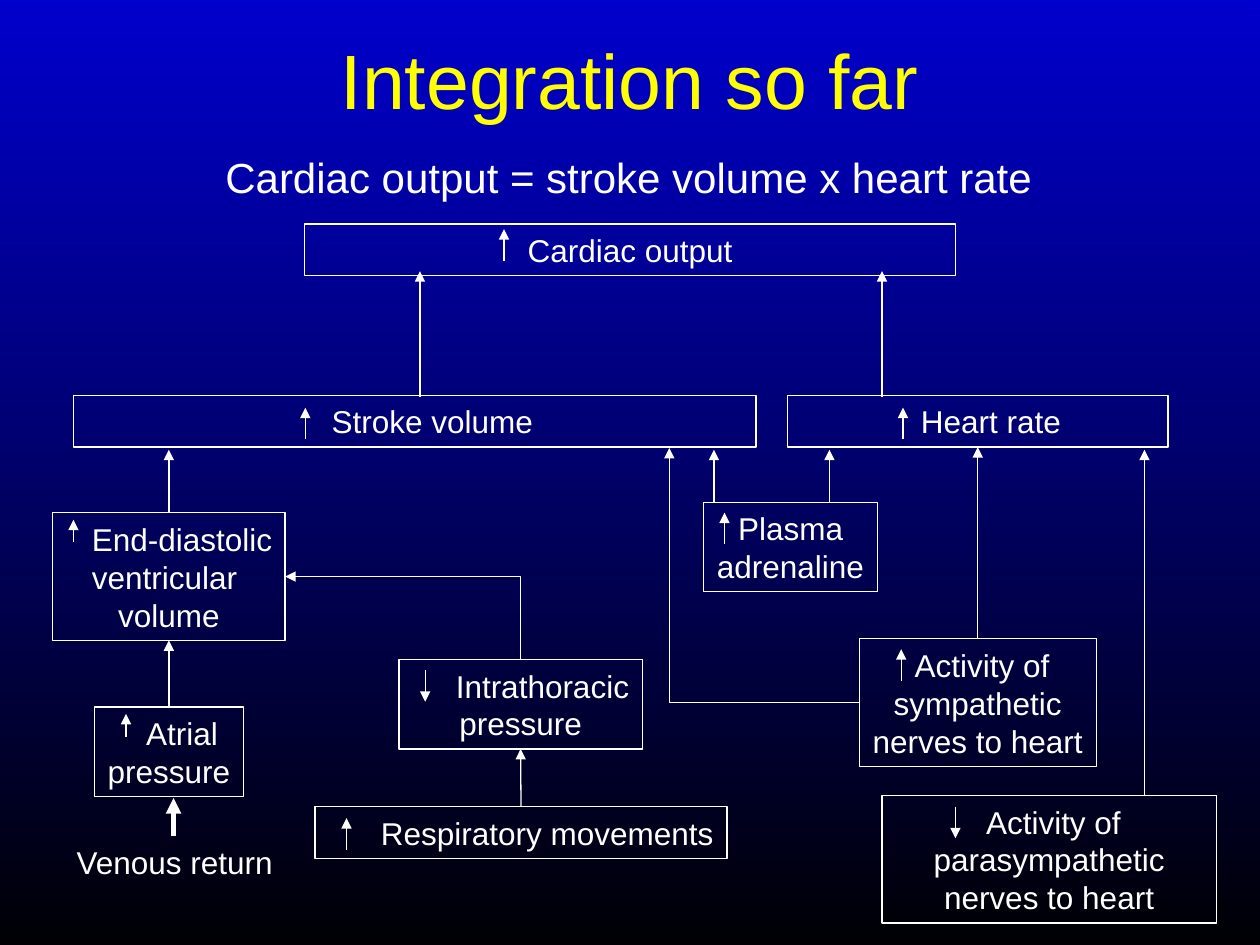
from dataclasses import dataclass

from lxml import etree
from pptx import Presentation
from pptx.dml.color import RGBColor
from pptx.enum import shapes, text
from pptx.oxml import ns
from pptx.util import Pt


@dataclass(frozen=True)
class Theme:
    font: str = "Arial"
    title: RGBColor = RGBColor(0xFF, 0xFF, 0x00)
    ink: RGBColor = RGBColor(0xFF, 0xFF, 0xFF)
    sky: RGBColor = RGBColor(0x00, 0x00, 0xCC)
    depth: RGBColor = RGBColor(0x00, 0x00, 0x05)
    title_size: int = 44
    equation_size: int = 24
    body_size: int = 18
    thin: float = 0.75
    thick: float = 3
    marker: int = 18
    short_marker: int = 13


THEME = Theme()
TOP, LEFT, BOTTOM, RIGHT = range(4)
CENTER = text.PP_ALIGN.CENTER

UP, SHORT_UP, DOWN = THEME.marker, THEME.short_marker, -THEME.marker
FACTORS = {
    "output": ((174, 128, 372, 29.5), [("Cardiac output", 0, 0)], (114, 3, UP)),
    "stroke": ((42, 226, 390, 29.5), [("Stroke volume", 20, 0)], (132.5, 7, UP)),
    "rate": ((450, 226, 217.5, 29.5), [("Heart rate", 15, 0)], (66, 7, UP)),
    "adrenaline": ((402, 287, 99.5, 51),
                   [("Plasma", 0, 0), ("adrenaline", 0, 0)], (12, 6, UP)),
    "ventricle": ((30, 293, 133, 73),
                  [("End-diastolic", 15, 0), ("ventricular", 0, 5), ("volume", 0, 0)],
                  (12, 4, SHORT_UP)),
    "atrium": ((54, 404, 85, 51),
               [("Atrial", 15, 0), ("pressure", 0, 0)], (18, 4, SHORT_UP)),
    "thorax": ((228, 377, 139, 51),
               [("Intrathoracic", 25, 0), ("pressure", 0, 0)], (15, 6, DOWN)),
    "breathing": ((180, 461, 235.5, 29.5),
                  [("Respiratory movements", 30, 0)], (18, 6.5, UP)),
    "sympathetic": ((491, 365, 135.5, 73),
                    [("Activity of", 5, 0), ("sympathetic", 0, 0),
                     ("nerves to heart", 0, 0)], (24, 6, UP)),
    "parasympathetic": ((504, 454.5, 191, 73),
                        [("Activity of", 5, 0), ("parasympathetic", 0, 0),
                         ("nerves to heart", 0, 0)], (42, 6.5, DOWN)),
}


def style_font(para, size, color=THEME.ink):
    para.font.name = THEME.font
    para.font.size = Pt(size)
    para.font.color.rgb = color


def add_arrow(page, start, end, width=THEME.thin, bent=False, head="tailEnd"):
    kind = shapes.MSO_CONNECTOR.ELBOW if bent else shapes.MSO_CONNECTOR.STRAIGHT
    arrow = page.shapes.add_connector(kind, *map(Pt, start + end))
    arrow.line.color.rgb = THEME.ink
    arrow.line.width = Pt(width)
    properties = arrow._element.spPr
    if bent:
        properties.find(ns.qn("a:prstGeom")).set("prst", "bentConnector2")
    line = properties.find(ns.qn("a:ln"))
    etree.SubElement(line, ns.qn(f"a:{head}")).set("type", "triangle")
    etree.SubElement(properties, ns.qn("a:effectLst"))
    return arrow


def add_label(page, box, words, size):
    label = page.shapes.add_textbox(*map(Pt, box))
    label.text_frame.word_wrap = True
    para = label.text_frame.paragraphs[0]
    para.text = words
    style_font(para, size)


def add_factor(page, box, lines, marker):
    factor = page.shapes.add_shape(shapes.MSO_SHAPE.RECTANGLE, *map(Pt, box))
    factor.shadow.inherit = False
    factor.fill.background()
    factor.line.color.rgb = THEME.ink
    factor.line.width = Pt(THEME.thin)
    frame = factor.text_frame
    frame.word_wrap = True
    frame.vertical_anchor = text.MSO_ANCHOR.MIDDLE
    frame.margin_left = frame.margin_right = Pt(3)
    for index, (words, left, right) in enumerate(lines):
        para = frame.add_paragraph() if index else frame.paragraphs[0]
        para.text = words
        para.alignment = CENTER
        style_font(para, THEME.body_size)
        for side, indent in (("marL", left), ("marR", right)):
            para._p.get_or_add_pPr().set(side, str(Pt(indent)))
    x, y, length = box[0] + marker[0], box[1] + marker[1], marker[2]
    ends = (x, y + abs(length)), (x, y)
    add_arrow(page, *(ends if length > 0 else ends[::-1]))
    return factor


def add_heading(page, box):
    left, top, width, height = box
    title = page.shapes.title
    title.left, title.top, title.width, title.height = map(Pt, (left, top, width, 54))
    title.text_frame.text = "Integration so far"
    title.text_frame.vertical_anchor = text.MSO_ANCHOR.MIDDLE
    para = title.text_frame.paragraphs[0]
    para.alignment = CENTER
    style_font(para, THEME.title_size, THEME.title)
    add_label(page, (left + 67.7, top + 65, 485, height - 65),
              "Cardiac output = stroke volume x heart rate", THEME.equation_size)


def add_links(page, factors):
    for x, start, end in ((240, 227, 155), (504, 227, 155), (408, 287, 257),
                          (474, 287, 257), (654, 455, 257)):
        add_arrow(page, (x, start), (x, end))

    for lower, upper in (("atrium", "ventricle"), ("breathing", "thorax"),
                         ("sympathetic", "rate")):
        link = add_arrow(page, (0, 0), (0, 0))
        link.begin_connect(factors[lower], TOP)
        link.end_connect(factors[upper], BOTTOM)

    filling = add_arrow(page, (96.5, 293), (96.5, 257))
    filling.begin_connect(factors["ventricle"], TOP)

    suction = add_arrow(page, (163, 329.5), (297.5, 377), bent=True, head="headEnd")
    suction.begin_connect(factors["ventricle"], RIGHT)
    suction.end_connect(factors["thorax"], TOP)

    contraction = add_arrow(page, (491, 401.5), (382.5, 256), bent=True)
    contraction.begin_connect(factors["sympathetic"], LEFT)


def add_venous_return(page, box):
    left, top, width, height = box
    x = left + 62.5
    add_label(page, (left, top + 22, width, height - 22), "Venous return", THEME.body_size)
    add_arrow(page, (x, top + 22), (x, top), THEME.thick)


def main():
    deck = Presentation()
    deck.slide_width, deck.slide_height = Pt(720), Pt(540)
    page = deck.slides.add_slide(deck.slide_layouts[5])
    fill = page.background.fill
    fill.gradient()
    fill.gradient_angle = 270
    for stop, color in zip(fill.gradient_stops, (THEME.sky, THEME.depth)):
        stop.color.rgb = color
    add_heading(page, (54, 18, 612, 101))
    factors = {name: add_factor(page, *parts) for name, parts in FACTORS.items()}
    add_links(page, factors)
    add_venous_return(page, (36.7, 456, 147.6, 51))
    deck.save("out.pptx")


if __name__ == "__main__":
    main()
